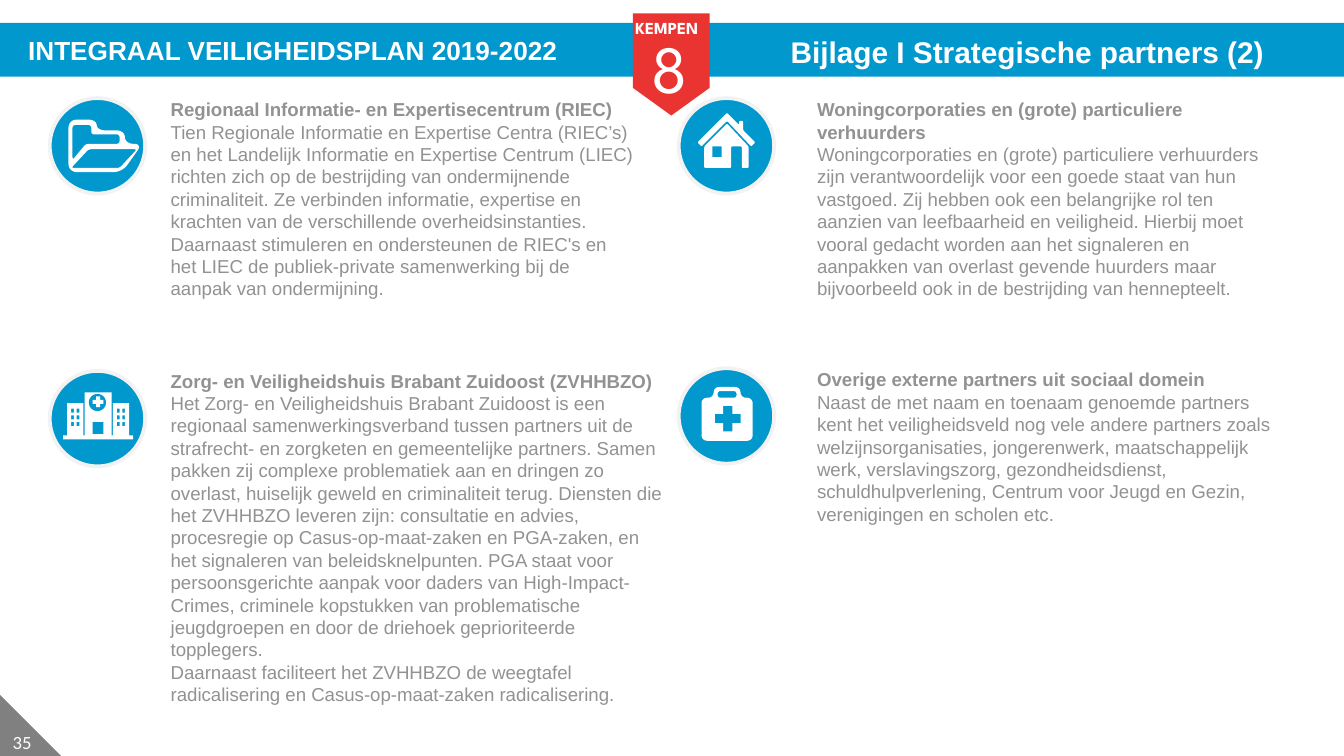
from dataclasses import dataclass
from itertools import product

from pptx import Presentation
from pptx.dml.color import RGBColor
from pptx.enum.shapes import MSO_SHAPE
from pptx.enum.text import MSO_ANCHOR, MSO_AUTO_SIZE, PP_ALIGN
from pptx.util import Pt

PX = 9144  # EMU per px, 100 px to the inch
SLIDE_WIDTH = 1000 * PX
SLIDE_HEIGHT = SLIDE_WIDTH * 9 // 16
LEFT, CENTER = PP_ALIGN.LEFT, PP_ALIGN.CENTER
TOP, MIDDLE = MSO_ANCHOR.TOP, MSO_ANCHOR.MIDDLE
GROW, FIXED = MSO_AUTO_SIZE.SHAPE_TO_FIT_TEXT, MSO_AUTO_SIZE.NONE
RECTANGLE, OVAL = MSO_SHAPE.RECTANGLE, MSO_SHAPE.OVAL
TRIANGLE, DOWN_ARROW = MSO_SHAPE.RIGHT_TRIANGLE, MSO_SHAPE.DOWN_ARROW
BLUE, RED, GREY = "0198CD", "E93432", "808080"
WHITE, RING, BODY = "FFFFFF", "F2F2F2", "929292"
BADGE_SIZE = 71


@dataclass
class Contour:
    points: list
    radius: int = 0


@dataclass
class Label:
    text: str
    box: tuple
    size: int
    font: str = "Arial"
    bold: bool = True
    align: PP_ALIGN = CENTER
    anchor: MSO_ANCHOR = TOP
    inset: tuple = (10, 5)
    wrap: bool = True
    fit: MSO_AUTO_SIZE = GROW


@dataclass
class Partner:
    badge: tuple
    box: tuple
    icon: list
    name: str
    description: list


def rgb(color: str) -> RGBColor:
    return RGBColor.from_string(color)


def box(x: int, y: int, w: int, h: int, radius: int = 0) -> Contour:
    return Contour([(x, y), (x + w, y), (x + w, y + h), (x, y + h)], radius)


def cross(x: int, y: int, size: int, arm: int) -> Contour:
    a, b = (size - arm) / 2, (size + arm) / 2
    steps = [(a, 0), (b, 0), (b, a), (size, a), (size, b), (b, b),
             (b, size), (a, size), (a, b), (0, b), (0, a), (a, a)]
    return Contour([(x + dx, y + dy) for dx, dy in steps])


def toward(start: tuple, end: tuple, radius: float) -> tuple:
    """Point at most halfway from start to end, radius away from start."""
    dx, dy = end[0] - start[0], end[1] - start[1]
    share = min(radius / (dx * dx + dy * dy) ** 0.5, 0.5)
    return start[0] + dx * share, start[1] + dy * share


def rounded(contour: Contour) -> list:
    """Outline in EMU, with each corner replaced by a sampled curve."""
    outline, corners = [], contour.points
    for i, corner in enumerate(corners):
        enter = toward(corner, corners[i - 1], contour.radius)
        leave = toward(corner, corners[(i + 1) % len(corners)], contour.radius)
        for step in range(7 if contour.radius else 1):
            t = step / 6
            u = 1 - t
            near = u ** 3 + 1.35 * u * u * t
            far = t ** 3 + 1.35 * t * t * u
            outline.append(tuple(
                round(PX * (near * e + far * f + (1 - near - far) * c))
                for e, f, c in zip(enter, leave, corner)))
    return outline


def paint(shape, fill: str, line: str = "") -> None:
    shape.shadow.inherit = False
    shape.fill.solid()
    shape.fill.fore_color.rgb = rgb(fill)
    if line:
        shape.line.color.rgb = rgb(line)
        shape.line.width = Pt(2)
    else:
        shape.line.fill.background()


def add_block(slide, kind: MSO_SHAPE, area: tuple, fill: str, line: str = ""):
    block = slide.shapes.add_shape(kind, *(v * PX for v in area))
    paint(block, fill, line)
    return block


def add_icon(slide, contours: list) -> None:
    first, *others = [rounded(contour) for contour in contours]
    builder = slide.shapes.build_freeform(*first[0], scale=1.0)
    builder.add_line_segments(first[1:], close=True)
    for outline in others:
        builder.move_to(*outline[0])
        builder.add_line_segments(outline[1:], close=True)
    paint(builder.convert_to_shape(), WHITE)


def add_frame(slide, area: tuple, inset: tuple, fit: MSO_AUTO_SIZE, wrap: bool = True):
    frame = slide.shapes.add_textbox(*(v * PX for v in area)).text_frame
    frame.margin_left = frame.margin_right = inset[0] * PX
    frame.margin_top = frame.margin_bottom = inset[1] * PX
    frame.auto_size, frame.word_wrap = fit, wrap
    return frame


def write(paragraph, text: str, font: str, size: int, color: str, bold: bool) -> None:
    paragraph.text = text
    paragraph.font.name, paragraph.font.size = font, Pt(size)
    paragraph.font.bold, paragraph.font.color.rgb = bold, rgb(color)


def add_label(slide, label: Label) -> None:
    frame = add_frame(slide, label.box, label.inset, label.fit, label.wrap)
    frame.vertical_anchor = label.anchor
    line = frame.paragraphs[0]
    line.alignment = label.align
    write(line, label.text, label.font, label.size, WHITE, label.bold)


def add_partner(slide, partner: Partner) -> None:
    add_block(slide, OVAL, (*partner.badge, BADGE_SIZE, BADGE_SIZE), BLUE, RING)
    add_icon(slide, partner.icon)
    frame = add_frame(slide, partner.box, (0, 0), GROW)
    for i, text in enumerate([partner.name, *partner.description]):
        paragraph = frame.add_paragraph() if i else frame.paragraphs[0]
        paragraph.line_spacing = Pt(12)
        write(paragraph, text, "Arial", 10, BODY, i == 0)


# Icons: inner contours are holes
FOLDER = [
    Contour([(51, 89), (72, 89), (72, 97), (93, 97), (93, 107), (106, 107), (91, 128), (51, 128)], 6),
    Contour([(54, 93), (68, 93), (68, 100), (89, 100), (89, 107), (64, 107), (54, 119)], 2),
    Contour([(66, 111), (102, 111), (89, 125), (53, 125)], 2),
]
HOSPITAL = [
    Contour([(47, 324), (50, 324), (50, 300), (62, 300), (62, 324), (63, 324), (63, 292), (83, 292),
             (83, 324), (84, 324), (84, 300), (96, 300), (96, 324), (99, 324), (99, 327), (47, 327)]),
    *[box(x, y, 2, 3) for x, y in product((53, 57, 87, 91), (304, 309, 314))],
    box(69, 314, 8, 9), box(66, 293, 13, 13, 7), cross(69, 295, 8, 3),
]
HOUSE = [
    Contour([(541, 84), (550, 93), (550, 90), (553, 90), (553, 97), (562, 106),
             (559, 109), (541, 90), (522, 109), (519, 106)], 1),
    Contour([(541, 92), (557, 109), (557, 125), (552, 125), (552, 109),
             (544, 109), (544, 125), (524, 125), (524, 109)], 1),
    box(530, 109, 7, 8),
]
FIRST_AID = [
    Contour([(522, 296), (531, 296), (531, 288), (551, 288), (551, 296),
             (560, 296), (560, 328), (522, 328)], 4),
    box(534, 291, 14, 5, 2), cross(532, 302, 19, 7),
]

LABELS = [
    Label("35", (0, 544, 33, 17), 10, "Calibri", False, anchor=MIDDLE, inset=(0, 0)),
    Label("INTEGRAAL VEILIGHEIDSPLAN 2019-2022", (5, 21, 426, 34), 14),
    Label("KEMPEN", (463, 8, 75, 21), 9, "League Spartan", align=LEFT, wrap=False),
    Label("8", (475, 15, 35, 71), 36, "League Spartan", False, LEFT),
    Label("Bijlage I Strategische partners (2)", (563, 19, 403, 39), 16,
          anchor=MIDDLE, inset=(0, 0), wrap=False, fit=FIXED),
]
PARTNERS = [
    Partner((37, 73), (127, 73, 346, 168), FOLDER, "Regionaal Informatie- en Expertisecentrum (RIEC)", [
        "Tien Regionale Informatie en Expertise Centra (RIEC’s) en het Landelijk Informatie en Expertise Centrum (LIEC) richten zich op de bestrijding van ondermijnende criminaliteit. Ze verbinden informatie, expertise en krachten van de verschillende overheidsinstanties. Daarnaast stimuleren en ondersteunen de RIEC's en het LIEC de publiek-private samenwerking bij de aanpak van ondermijning."]),
    Partner((37, 276), (127, 275, 367, 269), HOSPITAL, "Zorg- en Veiligheidshuis Brabant Zuidoost (ZVHHBZO)", [
        "Het Zorg- en Veiligheidshuis Brabant Zuidoost is een regionaal samenwerkingsverband tussen partners uit de strafrecht- en zorgketen en gemeentelijke partners. Samen pakken zij complexe problematiek aan en dringen zo overlast, huiselijk geweld en criminaliteit terug. Diensten die het ZVHHBZO leveren zijn: consultatie en advies, procesregie op Casus-op-maat-zaken en PGA-zaken, en het signaleren van beleidsknelpunten. PGA staat voor persoonsgerichte aanpak voor daders van High-Impact-Crimes, criminele kopstukken van problematische jeugdgroepen en door de driehoek geprioriteerde topplegers.",
        "Daarnaast faciliteert het ZVHHBZO de weegtafel radicalisering en Casus-op-maat-zaken radicalisering."]),
    Partner((505, 73), (608, 73, 346, 168), HOUSE, "Woningcorporaties en (grote) particuliere verhuurders", [
        "Woningcorporaties en (grote) particuliere verhuurders zijn verantwoordelijk voor een goede staat van hun vastgoed. Zij hebben ook een belangrijke rol ten aanzien van leefbaarheid en veiligheid. Hierbij moet vooral gedacht worden aan het signaleren en aanpakken van overlast gevende huurders maar bijvoorbeeld ook in de bestrijding van hennepteelt."]),
    Partner((505, 274), (608, 274, 346, 135), FIRST_AID, "Overige externe partners uit sociaal domein", [
        "Naast de met naam en toenaam genoemde partners kent het veiligheidsveld nog vele andere partners zoals welzijnsorganisaties, jongerenwerk, maatschappelijk werk, verslavingszorg, gezondheidsdienst, schuldhulpverlening, Centrum voor Jeugd en Gezin, verenigingen en scholen etc."]),
]


def main() -> None:
    prs = Presentation()
    prs.slide_width, prs.slide_height = SLIDE_WIDTH, SLIDE_HEIGHT
    slide = prs.slides.add_slide(prs.slide_layouts[6])

    # Page corner, header band and chapter ribbon
    add_block(slide, TRIANGLE, (0, 517, 46, 46), GREY)
    add_block(slide, RECTANGLE, (0, 17, 1000, 40), BLUE)
    ribbon = add_block(slide, DOWN_ARROW, (471, 10, 57, 76), RED)
    ribbon.adjustments[0], ribbon.adjustments[1] = 1, 0.36
    for label in LABELS:
        add_label(slide, label)

    # Partners
    for partner in PARTNERS:
        add_partner(slide, partner)
    prs.save("out.pptx")


if __name__ == "__main__":
    main()
